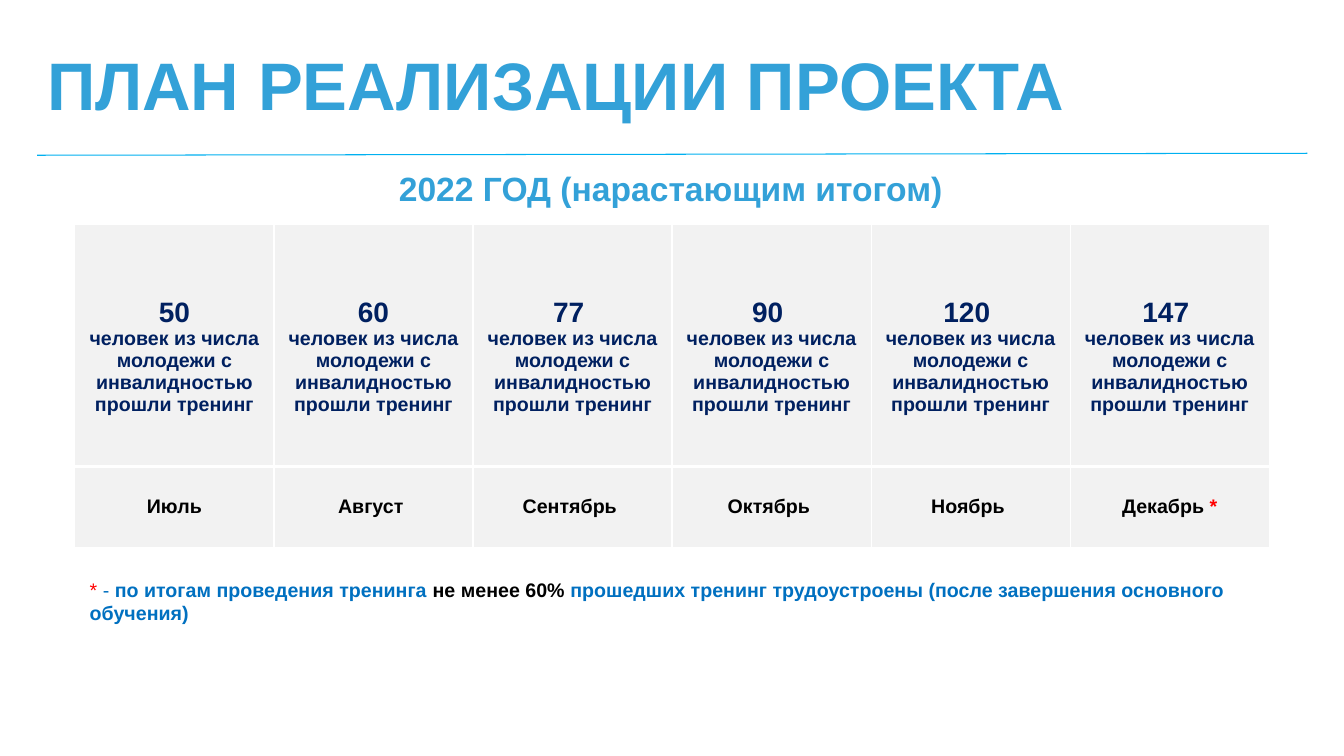
from lxml import etree
from pptx import Presentation
from pptx import util as u
from pptx.dml import color
from pptx.enum import shapes, text
from pptx.oxml import ns

COLORS = {
    "heading": "33A1D8", "rule": "00B0F0", "cell": "F2F2F2", "border": "FFFFFF",
    "count": "002060", "month": "000000", "star": "FF0000", "note": "0070C0",
}
MONTHS = [
    ("50", "Июль"), ("60", "Август "), ("77 ", "Сентябрь "),
    ("90 ", "Октябрь "), ("120 ", "Ноябрь "), ("147 ", "Декабрь "),
]
TRAINED = "человек из числа молодежи с инвалидностью прошли тренинг"


def rgb(name):
    return color.RGBColor.from_string(COLORS[name])


def write(paragraph, words, size=14, tint="month", bold=True, align=None):
    run = paragraph.add_run()
    run.text = words
    run.font.name = "Arial"
    run.font.size = u.Pt(size)
    run.font.bold = bold
    run.font.color.rgb = rgb(tint)
    if align is not None:
        paragraph.alignment = align


def add_frame(slide, box, anchor=text.MSO_ANCHOR.TOP):
    frame = slide.shapes.add_textbox(*map(u.Pt, box)).text_frame
    frame.word_wrap = True
    frame.vertical_anchor = anchor
    return frame.paragraphs[0]


def add_heading(slide, box):
    left, top, width, height = box
    title = add_frame(slide, (left, top, 799, height), text.MSO_ANCHOR.BOTTOM)
    write(title, "ПЛАН РЕАЛИЗАЦИИ ПРОЕКТА", size=48, tint="heading")
    rule = slide.shapes.add_connector(
        shapes.MSO_CONNECTOR.STRAIGHT, u.Pt(left), u.Pt(top + 75.6),
        u.Pt(left + width), u.Pt(top + 74.2))
    rule.line.color.rgb = rgb("rule")
    rule.line.width = u.Pt(0.75)
    etree.SubElement(rule._element.spPr, ns.qn("a:effectLst"))


def add_year(slide, box):
    write(add_frame(slide, box), "2022 ГОД (нарастающим итогом)",
          size=24, tint="heading", align=text.PP_ALIGN.CENTER)


def style_cell(cell, top, bottom):
    cell.fill.solid()
    cell.fill.fore_color.rgb = rgb("cell")
    properties = cell._tc.get_or_add_tcPr()
    sides = [("lnL", 1), ("lnR", 1), ("lnT", top), ("lnB", bottom)]
    for position, (side, weight) in enumerate(sides):
        edge = etree.Element(ns.qn(f"a:{side}"), w=str(u.Pt(weight)))
        paint = etree.SubElement(edge, ns.qn("a:solidFill"))
        etree.SubElement(paint, ns.qn("a:srgbClr"), val=COLORS["border"])
        properties.insert(position, edge)


def add_plan(slide, box):
    plan = slide.shapes.add_table(2, len(MONTHS), *map(u.Pt, box)).table
    for row, share in zip(plan.rows, (0.75, 0.25)):
        row.height = u.Pt(box[3] * share)
    center = text.PP_ALIGN.CENTER
    for column, (count, month) in enumerate(MONTHS):
        plan.columns[column].width = u.Pt(box[2] / len(MONTHS))
        result, label = plan.cell(0, column), plan.cell(1, column)
        style_cell(result, top=1, bottom=3)
        style_cell(label, top=3, bottom=1)
        result.margin_top = u.Pt(52)
        label.vertical_anchor = text.MSO_ANCHOR.MIDDLE
        write(result.text_frame.paragraphs[0], count, size=20, tint="count", align=center)
        write(result.text_frame.add_paragraph(), TRAINED, tint="count", align=center)
        write(label.text_frame.paragraphs[0], month, align=center)
    write(label.text_frame.paragraphs[0], "*", tint="star")


def add_footnote(slide, box):
    note = add_frame(slide, box)
    write(note, "* ", tint="star", bold=False)
    write(note, "- ", tint="note", bold=False)
    write(note, "по итогам проведения тренинга ", tint="note")
    write(note, "не менее 60% ")
    write(note, "прошедших тренинг трудоустроены (после завершения основного обучения)",
          tint="note")


def main():
    deck = Presentation()
    deck.slide_width, deck.slide_height = u.Pt(960), u.Pt(540)
    slide = deck.slides.add_slide(deck.slide_layouts[6])
    add_heading(slide, (26.6, 35.3, 907.2, 56.9))
    add_plan(slide, (53.5, 160, 853.2, 231))
    add_year(slide, (199.4, 116.6, 559.4, 36))
    add_footnote(slide, (57, 409, 845.3, 41))
    deck.save("out.pptx")


if __name__ == "__main__":
    main()
